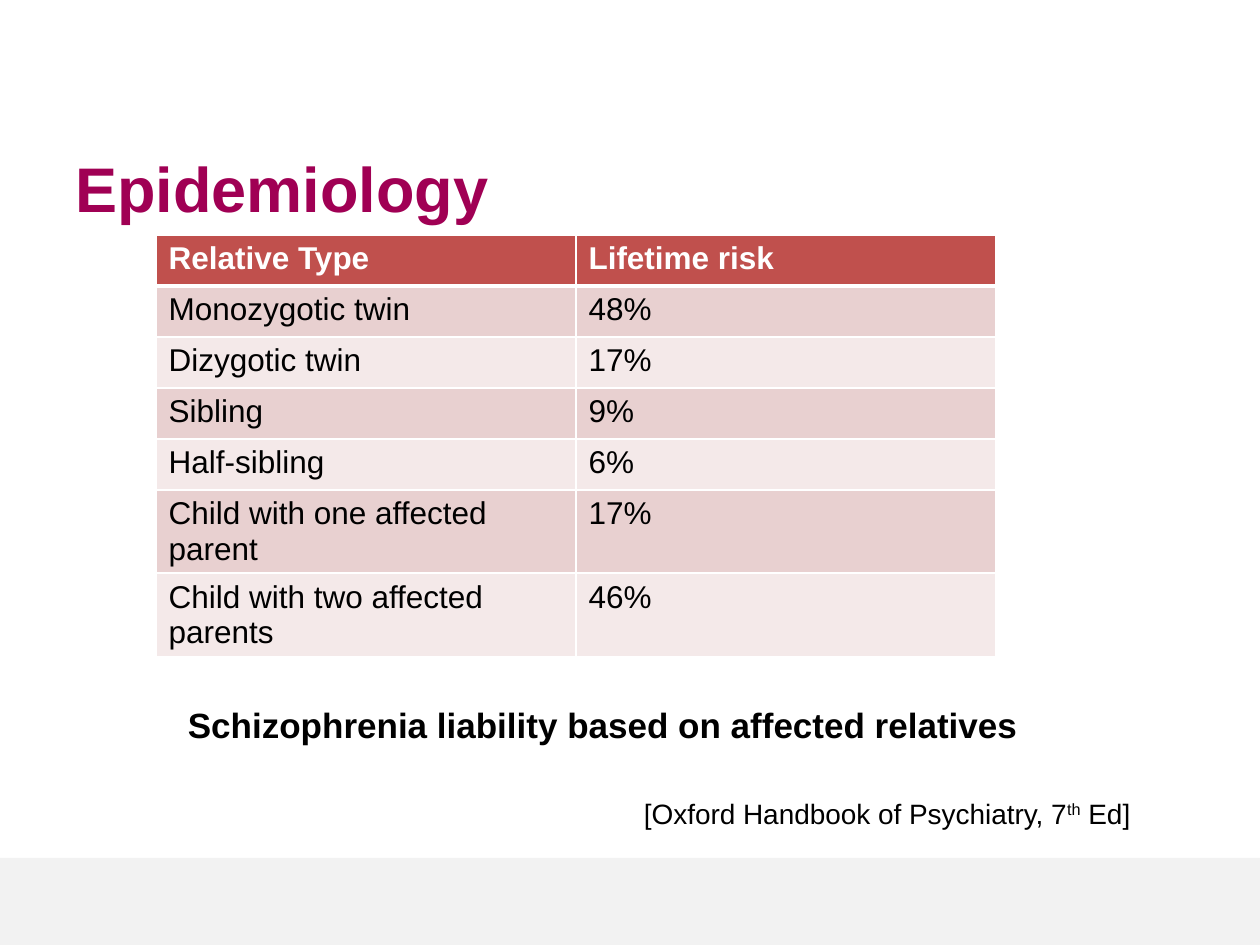
from dataclasses import dataclass

from lxml import etree
from pptx import Presentation
from pptx.dml.color import RGBColor
from pptx.enum.shapes import MSO_SHAPE
from pptx.enum.text import MSO_ANCHOR, MSO_AUTO_SIZE, PP_ALIGN
from pptx.oxml.ns import qn
from pptx.util import Emu, Pt

RECTANGLE = MSO_SHAPE.RECTANGLE
TOP, MIDDLE = MSO_ANCHOR.TOP, MSO_ANCHOR.MIDDLE
NO_AUTOFIT = MSO_AUTO_SIZE.NONE
LEFT, CENTER, RIGHT = PP_ALIGN.LEFT, PP_ALIGN.CENTER, PP_ALIGN.RIGHT
PX_PER_INCH = 126
SLIDE_WIDTH, SLIDE_HEIGHT = 1260, 945


@dataclass(frozen=True)
class Theme:
    font: str = "Arial"
    title_color: str = "A00054"
    text_color: str = "000000"
    header_text: str = "FFFFFF"
    header_fill: str = "C0504D"
    bands: tuple = ("E8D0D0", "F4E9E9")
    border: str = "FFFFFF"
    footer_fill: str = "F2F2F2"
    title_size: int = 36
    caption_size: int = 20
    table_size: int = 18
    citation_size: int = 16
    thin_line: int = 1
    thick_line: int = 3


def px(length):
    return Emu(round(length * 914400 / PX_PER_INCH))


class SlideBuilder:
    def __init__(self, slide, theme):
        self.slide = slide
        self.theme = theme

    def place(self, shape, left, top, width, height):
        shape.left, shape.top = px(left), px(top)
        shape.width, shape.height = px(width), px(height)

    def run(self, paragraph, text, size, color, bold=False, superscript=False):
        run = paragraph.add_run()
        run.text = text
        run.font.name = self.theme.font
        run.font.size = Pt(size)
        run.font.bold = bold
        run.font.color.rgb = RGBColor.from_string(color)
        if superscript:
            run.font._element.set("baseline", "30000")

    def band(self, left, top, width, height, color):
        band = self.slide.shapes.add_shape(
            RECTANGLE, px(left), px(top), px(width), px(height))
        band.shadow.inherit = False
        band.fill.solid()
        band.fill.fore_color.rgb = RGBColor.from_string(color)
        band.line.fill.background()

    def title(self, text, *box):
        title = self.slide.shapes.title
        self.place(title, *box)
        frame = title.text_frame
        frame.auto_size = NO_AUTOFIT
        frame.vertical_anchor = MIDDLE
        frame.paragraphs[0].alignment = LEFT
        self.run(frame.paragraphs[0], text, self.theme.title_size,
                 self.theme.title_color, bold=True)

    def body(self, paragraphs, *box):
        body = self.slide.placeholders[1]
        self.place(body, *box)
        frame = body.text_frame
        frame.auto_size = NO_AUTOFIT
        frame.vertical_anchor = TOP
        for index, (alignment, space_before, size, bold, parts) in enumerate(paragraphs):
            paragraph = frame.add_paragraph() if index else frame.paragraphs[0]
            properties = paragraph._p.get_or_add_pPr()
            properties.set("marL", "0")
            properties.set("indent", "0")
            etree.SubElement(properties, qn("a:buNone"))
            paragraph.alignment = alignment
            paragraph.space_before = Pt(space_before)
            for text, superscript in parts:
                self.run(paragraph, text, size, self.theme.text_color, bold, superscript)

    def cell_borders(self, cell, top, bottom):
        thin = self.theme.thin_line
        properties = cell._tc.get_or_add_tcPr()
        for side, weight in (("L", thin), ("R", thin), ("T", top), ("B", bottom)):
            line = etree.SubElement(properties, qn(f"a:ln{side}"), w=str(Pt(weight)))
            fill = etree.SubElement(line, qn("a:solidFill"))
            etree.SubElement(fill, qn("a:srgbClr"), val=self.theme.border)

    def table(self, rows, left, top, column_width, row_heights):
        theme = self.theme
        columns = len(rows[0])
        table = self.slide.shapes.add_table(
            len(rows), columns, px(left), px(top),
            px(column_width * columns), px(sum(row_heights))).table
        for column in table.columns:
            column.width = px(column_width)
        for index, (values, height) in enumerate(zip(rows, row_heights)):
            table.rows[index].height = px(height)
            header = index == 0
            fill = theme.header_fill if header else theme.bands[(index - 1) % 2]
            color = theme.header_text if header else theme.text_color
            above = theme.thick_line if index == 1 else theme.thin_line
            below = theme.thick_line if header else theme.thin_line
            for cell, value in zip(table.rows[index].cells, values):
                self.cell_borders(cell, above, below)
                cell.fill.solid()
                cell.fill.fore_color.rgb = RGBColor.from_string(fill)
                self.run(cell.text_frame.paragraphs[0], value,
                         theme.table_size, color, bold=header)


def main():
    theme = Theme()
    presentation = Presentation()
    presentation.slide_width = px(SLIDE_WIDTH)
    presentation.slide_height = px(SLIDE_HEIGHT)
    slide = presentation.slides.add_slide(presentation.slide_layouts[1])
    builder = SlideBuilder(slide, theme)

    footer_top = 858
    builder.band(0, footer_top, SLIDE_WIDTH, SLIDE_HEIGHT - footer_top, theme.footer_fill)
    builder.title("Epidemiology", 63, 141, 1071, 93)

    caption = [("Schizophrenia liability based on affected relatives", False)]
    citation = [("[Oxford Handbook of Psychiatry, 7", False), ("th", True), (" Ed]", False)]
    builder.body([
        (CENTER, 0, theme.caption_size, True, caption),
        (RIGHT, 29, theme.citation_size, False, citation),
    ], 63, 697, 1080, 140)

    risks = [
        ("Relative Type", "Lifetime risk"),
        ("Monozygotic twin", "48%"),
        ("Dizygotic twin", "17%"),
        ("Sibling", "9%"),
        ("Half-sibling", "6%"),
        ("Child with one affected parent", "17%"),
        ("Child with two affected parents", "46%"),
    ]
    builder.table(risks, 156, 235, 420, [51] * 5 + [83] * 2)
    presentation.save("out.pptx")


if __name__ == "__main__":
    main()
